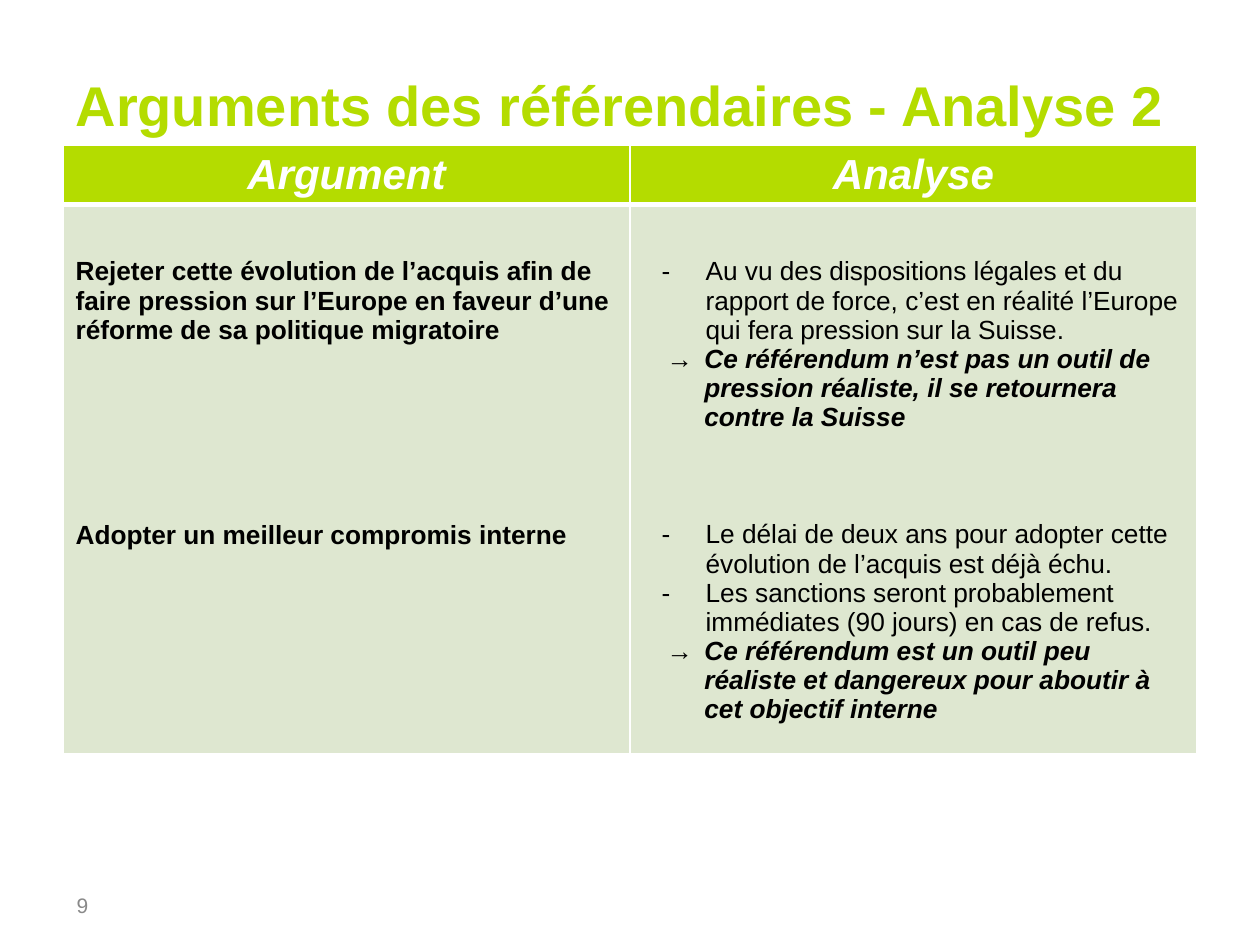
from dataclasses import dataclass

from lxml.etree import SubElement
from pptx import Presentation
from pptx.dml.color import RGBColor as Color
from pptx.enum.text import MSO_ANCHOR as Anchor, MSO_AUTO_SIZE as AutoSize, PP_ALIGN as Align
from pptx.oxml import parse_xml
from pptx.oxml.ns import nsdecls, qn
from pptx.util import Inches, Pt


@dataclass(frozen=True)
class Theme:
    """Colours, typeface and type sizes of the slide."""
    font: str = "Arial"
    lime: str = "B4DC00"
    pale: str = "DEE7D0"
    white: str = "FFFFFF"
    black: str = "000000"
    grey: str = "898989"
    title: int = 32
    header: int = 24
    body: int = 15
    number: int = 12


@dataclass(frozen=True)
class Entry:
    """One paragraph with its style and the number of lines left open above it."""
    text: str
    style: str
    lines_above: int = 0


@dataclass(frozen=True)
class Style:
    """Weight, slant, indents and bullet of a paragraph."""
    bold: bool = True
    italic: bool = False
    left: float = 0
    first: float = 0
    bullet: str = ""


@dataclass(frozen=True)
class Column:
    """A table column: its heading and its paragraphs."""
    heading: str
    entries: tuple[Entry, ...]


THEME = Theme()
LINE_FACTOR = 1.117
STYLES = {
    "argument": Style(),
    "point": Style(bold=False, left=0.5, first=-0.35, bullet="-"),
    "conclusion": Style(italic=True, left=0.49, first=-0.3),
}
COLUMNS = (
    Column("Argument", (
        Entry("Rejeter cette évolution de l’acquis afin de faire pression sur l’Europe "
              "en faveur d’une réforme de sa politique migratoire", "argument"),
        Entry("Adopter un meilleur compromis interne", "argument", 6),
    )),
    Column("Analyse", (
        Entry("Au vu des dispositions légales et du rapport de force, c’est en réalité "
              "l’Europe qui fera pression sur la Suisse.", "point"),
        Entry("→\tCe référendum n’est pas un outil de pression réaliste, il se retournera "
              "contre la Suisse", "conclusion"),
        Entry("Le délai de deux ans pour adopter cette évolution de l’acquis est déjà échu.",
              "point", 3),
        Entry("Les sanctions seront probablement immédiates (90 jours) en cas de refus.", "point"),
        Entry("→\tCe référendum est un outil peu réaliste et dangereux pour aboutir à cet "
              "objectif interne", "conclusion"),
    )),
)


def set_all(target, values: dict) -> None:
    """Set each named attribute on the target."""
    for name, value in values.items():
        setattr(target, name, value)


def write(para, text: str, size: int, color: str, bold: bool = False, italic: bool = False) -> None:
    """Add one formatted span to a paragraph."""
    span = para.add_run()
    span.text = text
    set_all(span.font, {"name": THEME.font, "size": Pt(size), "bold": bold, "italic": italic})
    span.font.color.rgb = Color.from_string(color)


def write_entry(para, entry: Entry) -> None:
    """Write a body paragraph with its gap, indents and bullet."""
    style = STYLES[entry.style]
    if entry.lines_above:
        para.space_before = Pt(round(entry.lines_above * THEME.body * LINE_FACTOR, 1))
    properties = para._p.get_or_add_pPr()
    properties.set("marL", str(Inches(style.left)))
    properties.set("indent", str(Inches(style.first)))
    if style.bullet:
        SubElement(SubElement(properties, qn("a:buClr")), qn("a:srgbClr"), val=THEME.black)
        SubElement(properties, qn("a:buFont"), typeface=THEME.font)
        SubElement(properties, qn("a:buChar"), char=style.bullet)
    write(para, entry.text, THEME.body, THEME.black, style.bold, style.italic)


def format_cell(cell, fill: str, top_width: float, bottom_width: float) -> None:
    """Fill a cell and give it white borders."""
    cell.fill.solid()
    cell.fill.fore_color.rgb = Color.from_string(fill)
    widths = {"lnL": 1, "lnR": 1, "lnT": top_width, "lnB": bottom_width}
    for place, (side, width) in enumerate(widths.items()):
        border = parse_xml(
            f'<a:{side} {nsdecls("a")} w="{Pt(width)}"><a:solidFill>'
            f'<a:srgbClr val="{THEME.white}"/></a:solidFill></a:{side}>')
        cell._tc.get_or_add_tcPr().insert(place, border)


def add_title(page, text: str) -> None:
    """Place and format the title placeholder."""
    title = page.shapes.title
    set_all(title, {"left": Inches(0.5), "top": Inches(0.2),
                    "width": Inches(9.15), "height": Inches(1.25)})
    set_all(title.text_frame, {"auto_size": AutoSize.NONE, "word_wrap": True,
                               "vertical_anchor": Anchor.MIDDLE})
    para = title.text_frame.paragraphs[0]
    para.alignment = Align.LEFT
    write(para, text, THEME.title, THEME.lime, bold=True)


def add_comparison(page, columns: tuple[Column, ...]) -> None:
    """Add the table of arguments and their analysis."""
    heights = (0.47, 4.36)
    table = page.shapes.add_table(len(heights), len(columns), Inches(0.5), Inches(1.15),
                                  Inches(9), Inches(sum(heights))).table
    table.horz_banding = False
    for row, height in zip(table.rows, heights):
        row.height = Inches(height)
    for index, column in enumerate(columns):
        header, body = table.cell(0, index), table.cell(1, index)
        format_cell(header, THEME.lime, 1, 3)
        format_cell(body, THEME.pale, 3, 1)
        para = header.text_frame.paragraphs[0]
        para.alignment = Align.CENTER
        write(para, column.heading, THEME.header, THEME.white, bold=True, italic=True)
        body.margin_top = Inches(0.42)
        for place, entry in enumerate(column.entries):
            frame = body.text_frame
            write_entry(frame.add_paragraph() if place else frame.paragraphs[0], entry)


def add_page_number(page, text: str) -> None:
    """Add the page number at the foot of the slide."""
    box = page.shapes.add_textbox(Inches(0.51), Inches(7.06), Inches(4.72), Inches(0.24))
    set_all(box.text_frame, {"word_wrap": True, "vertical_anchor": Anchor.MIDDLE})
    write(box.text_frame.paragraphs[0], text, THEME.number, THEME.grey)


def main() -> None:
    """Build and save the deck."""
    deck = Presentation()
    set_all(deck, {"slide_width": Inches(10), "slide_height": Inches(7.5)})
    page = deck.slides.add_slide(deck.slide_layouts[5])
    add_title(page, "Arguments des référendaires - Analyse 2")
    add_comparison(page, COLUMNS)
    add_page_number(page, "9")
    deck.save("out.pptx")


if __name__ == "__main__":
    main()
